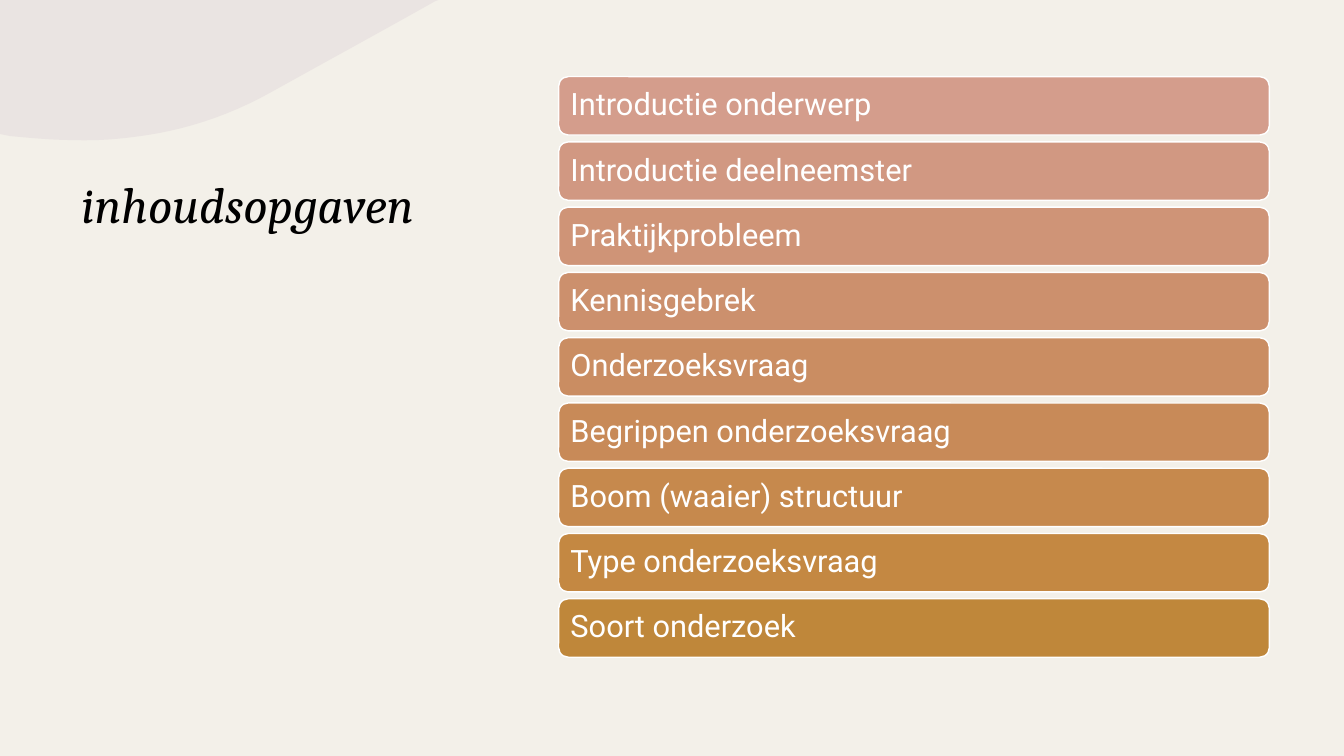
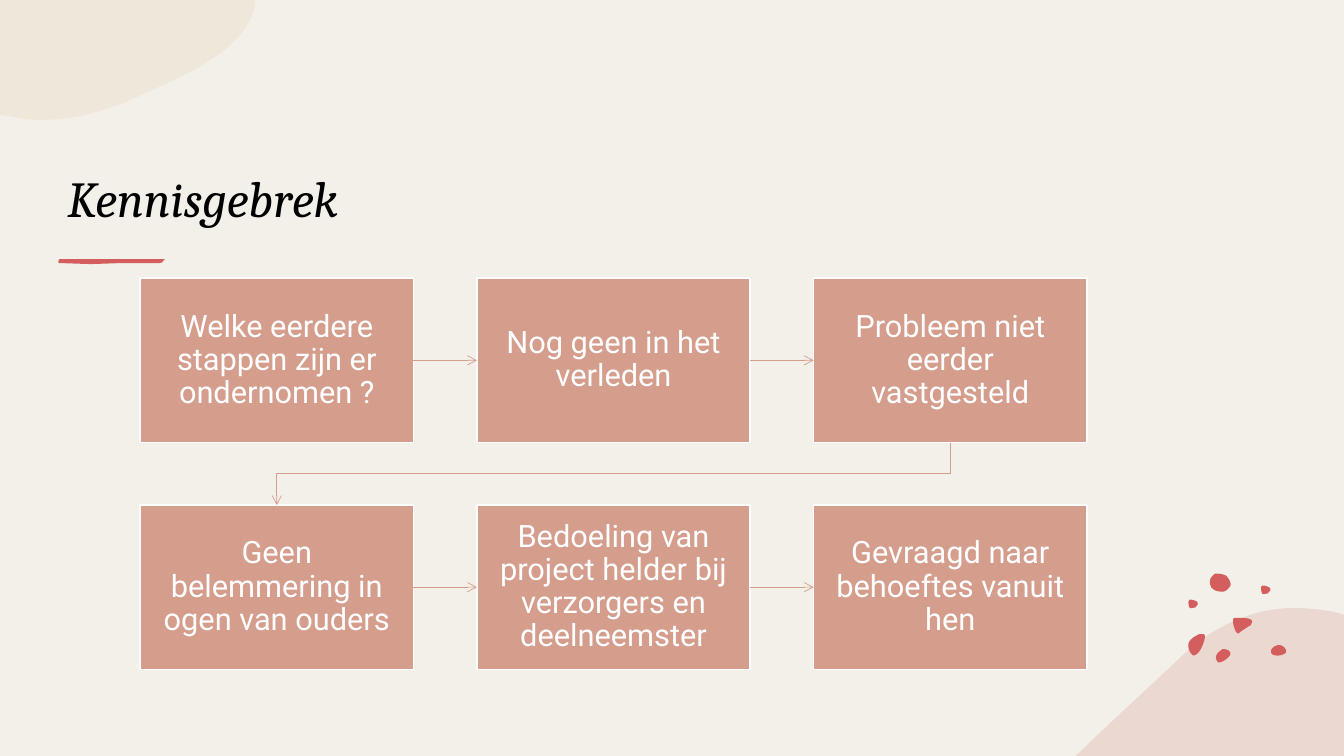
from lxml.etree import SubElement
from pptx import Presentation
from pptx.dml.color import RGBColor
from pptx.enum.shapes import MSO_CONNECTOR, MSO_SHAPE
from pptx.enum.text import MSO_ANCHOR, PP_ALIGN
from pptx.oxml.ns import qn
from pptx.util import Inches, Pt

# Shared colours and fonts
CREAM = RGBColor(0xF3, 0xF0, 0xE9)
WHITE = RGBColor(0xFF, 0xFF, 0xFF)
BLACK = RGBColor(0x00, 0x00, 0x00)
ROSE = RGBColor(0xD4, 0x9D, 0x8C)
RED = RGBColor(0xD4, 0x5E, 0x5E)
PINK = RGBColor(0xE5, 0xC4, 0xBA)
SAND = RGBColor(0xE7, 0xCF, 0xAF)
MAUVE = RGBColor(0xD2, 0xC4, 0xD0)
BODY_FORMAT = dict(font="Roboto", size=22, color=WHITE, spacing=0.9)
TITLE_FORMAT = dict(font="Cambria", size=36, color=BLACK, italic=True)
CURVE_STEPS = 10


def write_text(box, text, font, size, color, italic=False, spacing=1.0,
               align=PP_ALIGN.LEFT, anchor=MSO_ANCHOR.MIDDLE, inset=(0.1, 0.05)):
    """Fill a box with one formatted paragraph; inset is (sides, top and bottom)."""
    frame = box.text_frame
    frame.word_wrap = True
    frame.vertical_anchor = anchor
    frame.margin_left = frame.margin_right = Inches(inset[0])
    frame.margin_top = frame.margin_bottom = Inches(inset[1])
    para = frame.paragraphs[0]
    para.alignment = align
    para.line_spacing = spacing
    span = para.add_run()
    span.text = text
    span.font.name = font
    span.font.size = Pt(size)
    span.font.italic = italic
    span.font.color.rgb = color


def draw_blob(page, outline, color, opacity=100):
    """Draw a closed outline of points (x, y) and cubic curves (x1, y1, x2, y2, x, y)."""
    points = [outline[0]]
    for segment in outline[1:]:
        if len(segment) == 2:
            points.append(segment)
            continue
        controls = [points[-1], segment[0:2], segment[2:4], segment[4:6]]
        for step in range(1, CURVE_STEPS + 1):
            t = step / CURVE_STEPS
            weights = ((1 - t) ** 3, 3 * t * (1 - t) ** 2, 3 * t ** 2 * (1 - t), t ** 3)
            points.append(tuple(sum(weight * control[axis] for weight, control
                                    in zip(weights, controls)) for axis in (0, 1)))
    corners = [(Inches(x), Inches(y)) for x, y in points]
    builder = page.shapes.build_freeform(*corners[0])
    builder.add_line_segments(corners[1:], close=True)
    blob = builder.convert_to_shape()
    blob.shadow.inherit = False
    blob.line.fill.background()
    blob.fill.solid()
    blob.fill.fore_color.rgb = color
    if opacity < 100:
        color_element = blob.fill._xPr.find(qn("a:solidFill"))[0]
        SubElement(color_element, qn("a:alpha"), val=str(opacity * 1000))


deck = Presentation()
deck.slide_width = Inches(13.33)
deck.slide_height = Inches(7.5)

# Pages with background, corner blob and title
MAUVE_CORNER = [
    (0.74, 1.39), (0.53, 1.39, 0.31, 1.37, 0.1, 1.35), (0, 1.33), (0, 0), (4.35, 0),
    (4.32, 0.01), (3.77, 0.32, 3.2, 0.63, 2.68, 0.92), (2.32, 1.12, 1.95, 1.25, 1.58, 1.32),
    (1.3, 1.37, 1.02, 1.4, 0.74, 1.39)]
SAND_CORNER = [
    (0, 0), (2.53, 0), (2.53, 0.06), (2.45, 0.44, 2, 0.67, 1.58, 0.86),
    (1.23, 1.03, 0.86, 1.19, 0.41, 1.19), (0.31, 1.19, 0.22, 1.18, 0.13, 1.16), (0, 1.14)]
PAGES = [
    ("inhoudsopgaven", (0.71, 1.67, 4.84, 4.97), MSO_ANCHOR.TOP, MAUVE_CORNER, MAUVE),
    ("Kennisgebrek", (0.57, 0.86, 11.02, 1.45), MSO_ANCHOR.BOTTOM, SAND_CORNER, SAND),
]
pages = []
for title, place, anchor, corner, color in PAGES:
    page = deck.slides.add_slide(deck.slide_layouts[6])
    page.background.fill.solid()
    page.background.fill.fore_color.rgb = CREAM
    draw_blob(page, corner, color, opacity=25)
    title_box = page.shapes.add_textbox(*map(Inches, place))
    write_text(title_box, title, anchor=anchor, **TITLE_FORMAT)
    pages.append(page)
contents_page, gap_page = pages

# Contents: evenly spaced bars
CONTENTS = [
    ("Introductie onderwerp", ROSE),
    ("Introductie deelneemster", RGBColor(0xD1, 0x98, 0x82)),
    ("Praktijkprobleem", RGBColor(0xCF, 0x94, 0x77)),
    ("Kennisgebrek", RGBColor(0xCC, 0x90, 0x6D)),
    ("Onderzoeksvraag", RGBColor(0xCA, 0x8D, 0x62)),
    ("Begrippen onderzoeksvraag", RGBColor(0xC8, 0x8A, 0x58)),
    ("Boom (waaier) structuur", RGBColor(0xC6, 0x89, 0x4D)),
    ("Type onderzoeksvraag", RGBColor(0xC4, 0x88, 0x42)),
    ("Soort onderzoek", RGBColor(0xBF, 0x87, 0x3A)),
]
FIRST_TOP, LAST_TOP = 0.76, 5.94
bar_pitch = (LAST_TOP - FIRST_TOP) / (len(CONTENTS) - 1)
for index, (text, color) in enumerate(CONTENTS):
    bar = contents_page.shapes.add_shape(
        MSO_SHAPE.ROUNDED_RECTANGLE, Inches(5.54), Inches(FIRST_TOP + index * bar_pitch),
        Inches(7.05), Inches(0.58))
    bar.shadow.inherit = False
    bar.fill.solid()
    bar.fill.fore_color.rgb = color
    bar.line.color.rgb = WHITE
    bar.line.width = Pt(1)
    write_text(bar, text, inset=(0.09, 0.03), **BODY_FORMAT)

# Title stroke
draw_blob(gap_page, [
    (0.59, 2.57), (0.88, 2.57), (1.64, 2.57), (1.61, 2.58, 1.63, 2.61, 1.57, 2.61),
    (1.2, 2.61), (0.9, 2.62), (0.6, 2.61), (0.57, 2.62, 0.58, 2.58, 0.59, 2.57)], RED)

# Pink hill and red pebbles
draw_blob(gap_page, [
    (12.88, 6.03), (13.01, 6.04, 13.14, 6.05, 13.27, 6.08), (13.33, 6.1), (13.33, 7.5),
    (10.67, 7.5), (10.68, 7.49), (11.02, 7.16, 11.37, 6.84, 11.69, 6.54),
    (11.91, 6.32, 12.14, 6.19, 12.37, 6.11), (12.54, 6.05, 12.71, 6.03, 12.88, 6.03)],
    PINK, opacity=50)
SMALL_PEBBLE = [
    (0.01, 0.05), (0.01, 0.05, 0, 0.01, 0.02, 0), (0.04, 0, 0.05, 0, 0.07, 0.01),
    (0.08, 0.01, 0.1, 0.02, 0.1, 0.04), (0.1, 0.05, 0.09, 0.06, 0.08, 0.07),
    (0.08, 0.07, 0.08, 0.08, 0.06, 0.08), (0.05, 0.08, 0.03, 0.09, 0.02, 0.08),
    (0.01, 0.06, 0.01, 0.06, 0.01, 0.05)]
PEBBLES = [
    [(12.13, 6.44), (12.15, 6.44, 12.16, 6.44, 12.18, 6.45),
     (12.2, 6.46, 12.21, 6.48, 12.2, 6.5), (12.18, 6.53, 12.12, 6.58, 12.08, 6.57),
     (12.07, 6.56, 12.06, 6.54, 12.06, 6.52), (12.06, 6.5, 12.08, 6.47, 12.1, 6.46),
     (12.11, 6.45, 12.12, 6.44, 12.13, 6.44)],
    [(11.91, 6.29), (11.93, 6.29, 11.95, 6.29, 11.95, 6.31), (11.95, 6.33),
     (11.94, 6.38, 11.92, 6.43, 11.89, 6.47), (11.87, 6.49, 11.84, 6.52, 11.82, 6.49),
     (11.79, 6.46, 11.78, 6.41, 11.79, 6.38), (11.8, 6.35, 11.82, 6.34, 11.84, 6.32),
     (11.85, 6.32, 11.88, 6.29, 11.91, 6.29)],
    [(12.69, 6.4), (12.71, 6.4, 12.74, 6.42, 12.75, 6.44),
     (12.76, 6.46, 12.76, 6.48, 12.73, 6.49), (12.7, 6.51, 12.62, 6.51, 12.61, 6.48),
     (12.6, 6.46, 12.61, 6.44, 12.62, 6.43), (12.64, 6.41, 12.66, 6.4, 12.69, 6.4)],
    [(12.01, 5.81), (12, 5.81, 11.99, 5.75, 12.02, 5.72),
     (12.04, 5.7, 12.04, 5.69, 12.07, 5.69), (12.1, 5.69, 12.14, 5.7, 12.16, 5.71),
     (12.18, 5.73, 12.22, 5.78, 12.2, 5.82), (12.17, 5.85, 12.16, 5.87, 12.12, 5.87),
     (12.09, 5.87, 12.04, 5.86, 12.03, 5.84), (12.01, 5.83, 12.01, 5.82, 12.01, 5.81)],
    [(12.28, 6.13), (12.34, 6.13, 12.45, 6.13, 12.41, 6.19),
     (12.41, 6.2, 12.4, 6.21, 12.39, 6.21), (12.36, 6.23, 12.33, 6.25, 12.3, 6.27),
     (12.29, 6.28, 12.28, 6.29, 12.27, 6.28), (12.26, 6.27),
     (12.24, 6.23, 12.23, 6.2, 12.23, 6.16), (12.23, 6.15, 12.23, 6.14, 12.24, 6.13)],
]
for left, top in [(12.5, 5.81), (11.78, 5.95)]:
    PEBBLES.append([tuple(value + (left, top)[place % 2] for place, value in enumerate(segment))
                    for segment in SMALL_PEBBLE])
for pebble in PEBBLES:
    draw_blob(gap_page, pebble, RED)

# Steps in a grid of three columns
STEPS = [
    "Welke eerdere stappen zijn er ondernomen ?",
    "Nog geen in het verleden",
    "Probleem niet eerder vastgesteld",
    "Geen belemmering in ogen van ouders",
    "Bedoeling van project helder bij verzorgers en deelneemster",
    "Gevraagd naar behoeftes vanuit hen",
]
COLUMNS = 3
step_boxes = []
for index, text in enumerate(STEPS):
    row, column = divmod(index, COLUMNS)
    box = gap_page.shapes.add_shape(
        MSO_SHAPE.RECTANGLE, Inches(1.39 + column * 3.34), Inches(2.76 + row * 2.25),
        Inches(2.71), Inches(1.63))
    box.shadow.inherit = False
    box.fill.solid()
    box.fill.fore_color.rgb = ROSE
    box.line.color.rgb = WHITE
    box.line.width = Pt(1)
    write_text(box, text, align=PP_ALIGN.CENTER, inset=(0.13, 0.14), **BODY_FORMAT)
    step_boxes.append(box)

# Arrows from each step to the next; the row change bends
for index, (start, end) in enumerate(zip(step_boxes, step_boxes[1:]), start=1):
    new_row = index % COLUMNS == 0
    kind = MSO_CONNECTOR.ELBOW if new_row else MSO_CONNECTOR.STRAIGHT
    arrow = gap_page.shapes.add_connector(kind, 0, 0, 0, 0)
    arrow.begin_connect(start, 2 if new_row else 3)
    arrow.end_connect(end, 0 if new_row else 1)
    if new_row:
        # A quarter turn makes the bend leave downwards
        across = start.left - end.left
        down = end.top - start.top - start.height
        middle_x = end.left + (end.width + across) // 2
        middle_y = end.top - down // 2
        frame = arrow._element.spPr.find(qn("a:xfrm"))
        for flip in ("flipH", "flipV"):
            frame.attrib.pop(flip, None)
        frame.set("rot", "5400000")
        arrow.left, arrow.top = middle_x - down // 2, middle_y - across // 2
        arrow.width, arrow.height = down, across
    arrow.line.color.rgb = ROSE
    arrow.line.width = Pt(0.5)
    SubElement(arrow.line._get_or_add_ln(), qn("a:tailEnd"), type="arrow")
    SubElement(arrow._element.spPr, qn("a:effectLst"))

deck.save("out.pptx")
